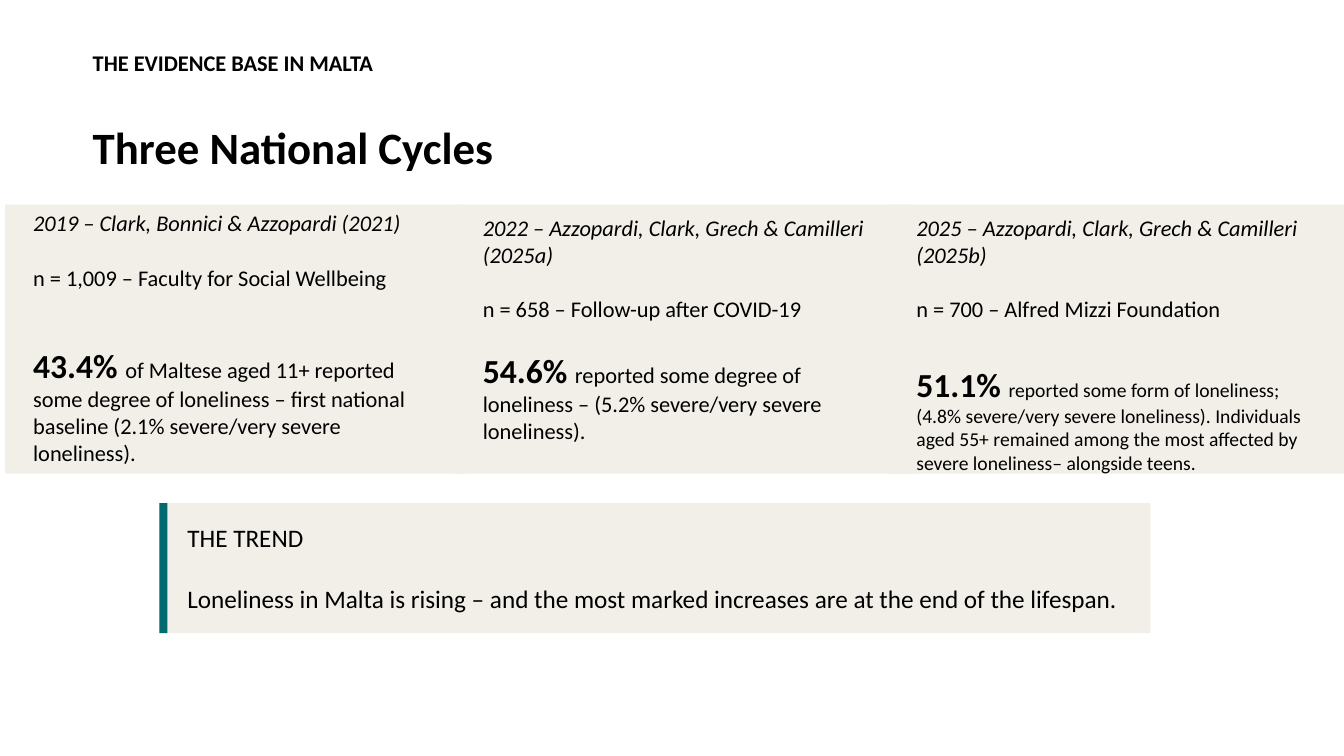
from pptx import Presentation
from pptx.dml.color import RGBColor
from pptx.enum.shapes import MSO_SHAPE
from pptx.enum.text import MSO_ANCHOR
from pptx.util import Inches, Pt

THEME = {
    "font": "Calibri", "ink": "000000", "panel": "F2EFE8", "accent": "01696F",
    "body": 16, "small": 14, "trend": 18, "figure": 24, "title": 32,
}
LINE = 1.22  # Calibri line height relative to type size

KICKER = "THE EVIDENCE BASE IN MALTA"
TITLE = "Three National Cycles"
CYCLES = [
    {"panel_left": 0.05, "text_left": 0.23, "text_top": 2.03, "gap": 2 * THEME["body"],
     "source": "2019 – Clark, Bonnici & Azzopardi (2021)",
     "sample": "n = 1,009 – Faculty for Social Wellbeing",
     "figure": "43.4% ", "finding_size": THEME["body"],
     "finding": "of Maltese aged 11+ reported some degree of loneliness – first "
                "national baseline (2.1% severe/very severe loneliness)."},
    {"panel_left": 4.51, "text_left": 4.69, "text_top": 2.08, "gap": THEME["body"],
     "source": "2022 – Azzopardi, Clark, Grech & Camilleri (2025a)",
     "sample": "n = 658 – Follow-up after COVID-19",
     "figure": "54.6% ", "finding_size": THEME["body"],
     "finding": "reported some degree of loneliness – (5.2% severe/very severe "
                "loneliness)."},
    {"panel_left": 8.81, "text_left": 8.99, "text_top": 2.08, "gap": THEME["figure"],
     "source": "2025 – Azzopardi, Clark, Grech & Camilleri (2025b)",
     "sample": "n = 700 – Alfred Mizzi Foundation",
     "figure": "51.1% ", "finding_size": THEME["small"],
     "finding": "reported some form of loneliness; (4.8% severe/very severe "
                "loneliness). Individuals aged 55+ remained among the most affected "
                "by severe loneliness– alongside teens."},
]
TREND = ["THE TREND",
         "Loneliness in Malta is rising – and the most marked increases are at the "
         "end of the lifespan."]
SLIDE_WIDTH, SLIDE_HEIGHT = 13.33, 7.5
PANEL_TOP, PANEL_WIDTH, PANEL_HEIGHT = 2.03, 4.57, 2.67
TREND_LEFT, TREND_TOP, TREND_WIDTH, TREND_HEIGHT = 1.58, 4.99, 9.83, 1.29

deck = Presentation()
deck.slide_width, deck.slide_height = Inches(SLIDE_WIDTH), Inches(SLIDE_HEIGHT)
page = deck.slides.add_slide(deck.slide_layouts[6])


def add_panel(left, top, width, height, color):
    panel = page.shapes.add_shape(MSO_SHAPE.RECTANGLE, Inches(left), Inches(top),
                                  Inches(width), Inches(height))
    panel.shadow.inherit = False
    panel.fill.solid()
    panel.fill.fore_color.rgb = RGBColor.from_string(color)
    panel.line.fill.background()


def add_box(left, top, width, height):
    frame = page.shapes.add_textbox(Inches(left), Inches(top),
                                    Inches(width), Inches(height)).text_frame
    frame.word_wrap = True
    return frame


def add_text(para, text, size=THEME["body"], bold=False, italic=False):
    span = para.add_run()
    span.text = text
    span.font.name = THEME["font"]
    span.font.size = Pt(size)
    span.font.bold = bold
    span.font.italic = italic
    span.font.color.rgb = RGBColor.from_string(THEME["ink"])


def next_para(box, gap):
    para = box.add_paragraph()
    para.space_before = Pt(round(gap * LINE, 1))
    return para


# Heading
box = add_box(0.92, 0.4, 11.5, 1.45)
box.margin_left = box.margin_right = 0
box.vertical_anchor = MSO_ANCHOR.MIDDLE
kicker = box.paragraphs[0]
add_text(kicker, KICKER, bold=True)
title = next_para(box, THEME["title"] * 0.9)
add_text(title, TITLE, size=THEME["title"], bold=True)
kicker.line_spacing = title.line_spacing = 0.9

# Panels behind the three cycles
for cycle in CYCLES:
    left = cycle["panel_left"]
    add_panel(left, PANEL_TOP, min(PANEL_WIDTH, SLIDE_WIDTH - left), PANEL_HEIGHT,
              THEME["panel"])

# Cycle texts
for cycle in CYCLES:
    box = add_box(cycle["text_left"], cycle["text_top"], 4.21, 2.66)
    add_text(box.paragraphs[0], cycle["source"], italic=True)
    add_text(next_para(box, THEME["body"]), cycle["sample"])
    result = next_para(box, cycle["gap"])
    add_text(result, cycle["figure"], size=THEME["figure"], bold=True)
    add_text(result, cycle["finding"], size=cycle["finding_size"])

# Trend callout
add_panel(TREND_LEFT, TREND_TOP, TREND_WIDTH, TREND_HEIGHT, THEME["panel"])
add_panel(TREND_LEFT, TREND_TOP, 0.08, TREND_HEIGHT, THEME["accent"])
box = add_box(1.76, 5.13, 9.47, 1.01)
add_text(box.paragraphs[0], TREND[0], size=THEME["trend"])
add_text(next_para(box, THEME["trend"]), TREND[1], size=THEME["trend"])

deck.save("out.pptx")
